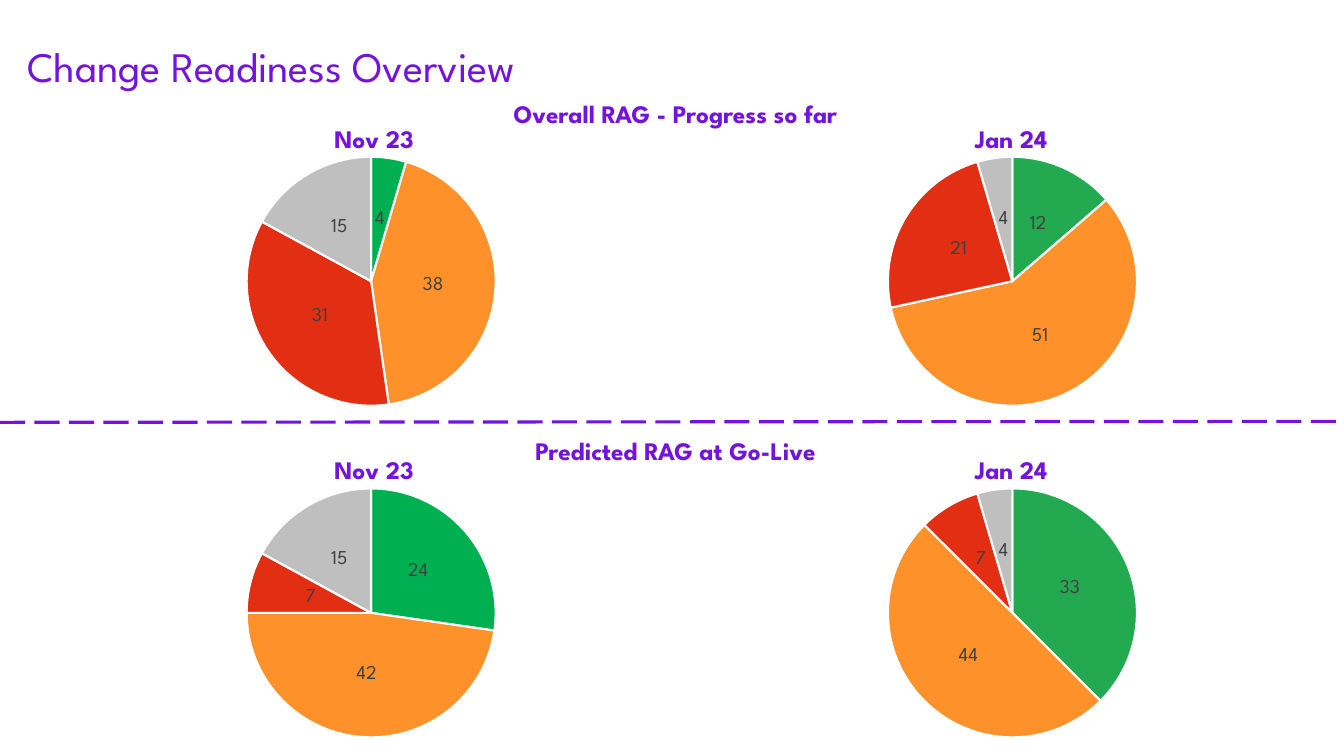
from lxml import etree
from pptx import Presentation
from pptx.chart.data import CategoryChartData
from pptx.dml.color import RGBColor
from pptx.enum.chart import XL_CHART_TYPE, XL_LABEL_POSITION
from pptx.enum.dml import MSO_LINE
from pptx.enum.shapes import MSO_CONNECTOR
from pptx.enum.text import MSO_ANCHOR, PP_ALIGN
from pptx.oxml import parse_xml
from pptx.oxml.ns import nsdecls, qn
from pptx.util import Inches, Pt

PIE = XL_CHART_TYPE.PIE
LABEL_CENTER = XL_LABEL_POSITION.CENTER
LONG_DASH = MSO_LINE.LONG_DASH
STRAIGHT = MSO_CONNECTOR.STRAIGHT
TOP = MSO_ANCHOR.TOP
LEFT, CENTER = PP_ALIGN.LEFT, PP_ALIGN.CENTER

FONT = "League Spartan"
PURPLE = RGBColor(0x74, 0x13, 0xDC)
WHITE = RGBColor(0xFF, 0xFF, 0xFF)
BLACK = RGBColor(0x00, 0x00, 0x00)
DARK = RGBColor(0x40, 0x40, 0x40)
GREEN_NOV = RGBColor(0x00, 0xB0, 0x50)
GREEN_JAN = RGBColor(0x23, 0xA9, 0x50)
AMBER = RGBColor(0xFF, 0x91, 0x2A)
RED = RGBColor(0xE2, 0x2E, 0x12)
GREY = RGBColor(0xBF, 0xBF, 0xBF)

SLIDE_W, SLIDE_H = 13.33, 7.5
PIE_W, PIE_H, PIE_SIZE = 3.94, 2.76, 2.47
HEADING_W, HEADING_H, HEADING_RISE = 1.17, 0.4, 0.24

MONTHS = [
    ("Nov 23", 1.71, 3.09, GREEN_NOV),
    ("Jan 24", 8.07, 9.41, GREEN_JAN),
]
BANDS = [
    ("Overall RAG - Progress so far", 0.93, 1.41, 3.99,
     [(4, 38, 31, 15), (12, 51, 21, 4)]),
    ("Predicted RAG at Go-Live", 4.27, 4.7, 3.55,
     [(24, 42, 7, 15), (33, 44, 7, 4)]),
]


def add_text(s, text, x, y, w, h, size, align):
    """Add a one-line purple text box and return it."""
    sp = s.shapes.add_textbox(Inches(x), Inches(y), Inches(w), Inches(h))
    tf = sp.text_frame
    tf.word_wrap = True
    tf.vertical_anchor = TOP
    tf.text = text
    p = tf.paragraphs[0]
    p.alignment = align
    font = p.runs[0].font
    font.name, font.size = FONT, Pt(size)
    font.color.rgb = PURPLE
    return sp


def add_heading(s, text, x, y, w):
    """Add a bold, centred and slightly indented heading."""
    sp = add_text(s, text, x, y, w, HEADING_H, 18, CENTER)
    p = sp.text_frame.paragraphs[0]
    p.runs[0].font.bold = True
    p._p.get_or_add_pPr().set("marL", str(Inches(0.07)))


def add_title(s, x, y, w, h):
    """Add the slide title without inner margins."""
    sp = add_text(s, "Change Readiness Overview", x, y, w, h, 30, LEFT)
    tf = sp.text_frame
    tf.margin_left = tf.margin_right = tf.margin_top = tf.margin_bottom = 0


def add_divider(s, y):
    """Add the dashed line across the slide."""
    line = s.shapes.add_connector(
        STRAIGHT, 0, Inches(y), Inches(SLIDE_W), Inches(y - 0.01))
    line.line.color.rgb = PURPLE
    line.line.width = Pt(2.25)
    line.line.dash_style = LONG_DASH
    etree.SubElement(line._element.spPr, qn("a:effectLst"))


def set_plot_size(chart, w, h):
    """Centre the inner plot area, given as shares of the chart."""
    plot_area = chart._chartSpace.chart.plotArea
    for old in plot_area.findall(qn("c:layout")):
        plot_area.remove(old)
    parts = {"x": (1 - w) / 2, "y": (1 - h) / 2, "w": w, "h": h}
    values = "".join(f'<c:{k} val="{v:.3f}"/>' for k, v in parts.items())
    plot_area.insert(0, parse_xml(
        f'<c:layout {nsdecls("c")}><c:manualLayout>'
        '<c:layoutTarget val="inner"/><c:xMode val="edge"/>'
        f'<c:yMode val="edge"/>{values}</c:manualLayout></c:layout>'))


def add_pie(s, values, green, x, y):
    """Add one RAG pie with values at the slice centres."""
    data = CategoryChartData()
    data.categories = ["1", "2", "3", "4"]
    data.add_series("Series 1", values)
    chart = s.shapes.add_chart(
        PIE, Inches(x), Inches(y), Inches(PIE_W), Inches(PIE_H), data).chart
    chart.has_title = chart.has_legend = False
    chart.font.name, chart.font.size = FONT, Pt(10)
    chart.font.color.rgb = BLACK
    set_plot_size(chart, PIE_SIZE / PIE_W, PIE_SIZE / PIE_H)

    plot = chart.plots[0]
    plot.vary_by_categories = True
    for i, color in enumerate((green, AMBER, RED, GREY)):
        fmt = plot.series[0].points[i].format
        fmt.fill.solid()
        fmt.fill.fore_color.rgb = color
        fmt.line.color.rgb = WHITE
        fmt.line.width = Pt(1.5)

    labels = plot.series[0].data_labels
    labels.show_value = True
    labels.position = LABEL_CENTER
    labels.font.name, labels.font.size = FONT, Pt(14)
    labels.font.color.rgb = DARK


def add_band(s, title, title_y, pie_y, title_w, results):
    """Add a section heading with one titled pie for each month."""
    add_heading(s, title, (SLIDE_W - title_w) / 2, title_y, title_w)
    for (month, pie_x, month_x, green), values in zip(MONTHS, results):
        add_pie(s, values, green, pie_x, pie_y)
        add_heading(s, month, month_x, pie_y - HEADING_RISE, HEADING_W)


def main():
    """Build and save the slide."""
    prs = Presentation()
    prs.slide_width, prs.slide_height = Inches(SLIDE_W), Inches(SLIDE_H)
    s = prs.slides.add_slide(prs.slide_layouts[6])
    add_divider(s, 4.19)
    add_title(s, 0.27, 0.4, 7.8, 0.5)
    for band in BANDS:
        add_band(s, *band)
    prs.save("out.pptx")


if __name__ == "__main__":
    main()
